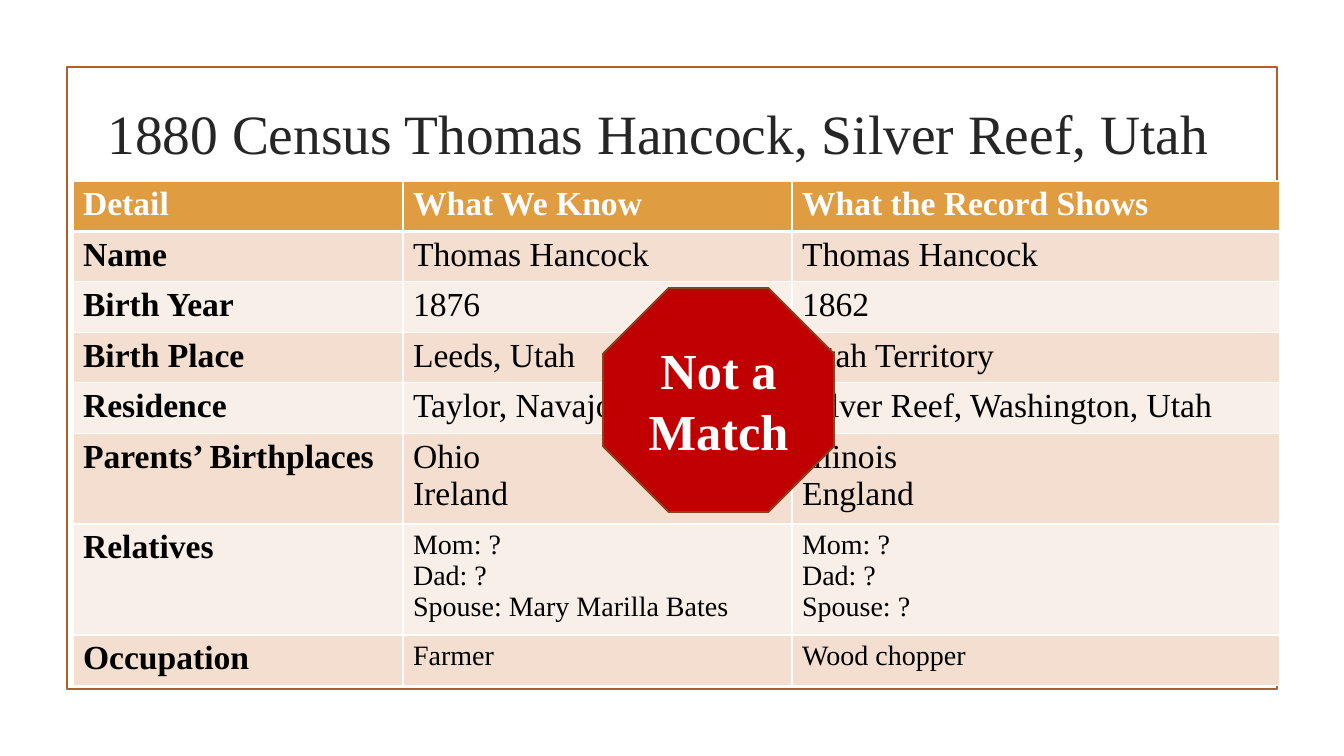
from lxml import etree
from pptx import Presentation
from pptx.dml.color import RGBColor
from pptx.enum.shapes import MSO_SHAPE
from pptx.enum.text import MSO_ANCHOR, PP_ALIGN
from pptx.oxml.ns import qn
from pptx.util import Pt

TITLE = "1880 Census Thomas Hancock, Silver Reef, Utah"
VERDICT = "Not a Match"
ROWS = [
    ("Detail", "What We Know", "What the Record Shows"),
    ("Name", "Thomas Hancock", "Thomas Hancock"),
    ("Birth Year", "1876", "1862"),
    ("Birth Place", "Leeds, Utah", "Utah Territory"),
    ("Residence", "Taylor, Navajo, Arizona", "Silver Reef, Washington, Utah"),
    ("Parents’ Birthplaces", "Ohio\nIreland", "Illinois\nEngland"),
    ("Relatives", "Mom: ?\nDad: ?\nSpouse: Mary Marilla Bates",
     "Mom: ?\nDad: ?\nSpouse: ?"),
    ("Occupation", "Farmer", "Wood chopper"),
]
SMALL_TEXT_ROWS = ("Relatives", "Occupation")
ROW_HEIGHTS = {"Parents’ Birthplaces": 84, "Relatives": 103}
DEFAULT_ROW_HEIGHT = 47
COLUMN_WIDTHS = (330, 389, 488)

SLIDE_SIZE = (1344, 756)
FRAME_AREA = (67, 67, 1210, 622)
TITLE_AREA = (66, 84, 1184, 97)
TABLE_CORNER = (73, 181)
VERDICT_AREA = (603, 288, 231, 224)

FONT = "Times New Roman"
WHITE, BLACK, TITLE_GREY = "FFFFFF", "000000", "262626"
HEADER_FILL, BAND_FILLS = "E09C41", ("F9EFE9", "F3DECF")
FRAME_LINE, VERDICT_FILL, VERDICT_LINE = "B15E28", "C00000", "83461E"

RECTANGLE, OCTAGON = MSO_SHAPE.RECTANGLE, MSO_SHAPE.OCTAGON
MIDDLE, CENTER = MSO_ANCHOR.MIDDLE, PP_ALIGN.CENTER


def px(length):
    return round(length * 914400 / 100.8)


def color(hex_code):
    return RGBColor.from_string(hex_code)


def write(frame, text, size, hex_code, bold=False, align=None):
    frame.text = text
    for para in frame.paragraphs:
        para.alignment = align
        for span in para.runs:
            span.font.name = FONT
            span.font.size = Pt(size)
            span.font.bold = bold
            span.font.color.rgb = color(hex_code)


def add_outlined(slide, kind, area, line, fill=None):
    shape = slide.shapes.add_shape(kind, *map(px, area))
    shape.shadow.inherit = False
    if fill:
        shape.fill.solid()
        shape.fill.fore_color.rgb = color(fill)
    else:
        shape.fill.background()
    shape.line.color.rgb = color(line)
    shape.line.width = Pt(1.25)
    return shape


def set_borders(cell, top, bottom):
    """Draw white borders, 1 pt at the sides and the given widths above and below."""
    properties = cell._tc.get_or_add_tcPr()
    sides = (("a:lnL", 1), ("a:lnR", 1), ("a:lnT", top), ("a:lnB", bottom))
    for position, (tag, width) in enumerate(sides):
        line = etree.Element(qn(tag), w=str(Pt(width)))
        fill = etree.SubElement(line, qn("a:solidFill"))
        etree.SubElement(fill, qn("a:srgbClr"), val=WHITE)
        properties.insert(position, line)


def add_comparison(slide):
    heights = [ROW_HEIGHTS.get(row[0], DEFAULT_ROW_HEIGHT) for row in ROWS]
    area = (*TABLE_CORNER, sum(COLUMN_WIDTHS), sum(heights))
    table = slide.shapes.add_table(
        len(ROWS), len(COLUMN_WIDTHS), *map(px, area)).table
    for column, width in zip(table.columns, COLUMN_WIDTHS):
        column.width = px(width)
    for r, (row, height) in enumerate(zip(ROWS, heights)):
        table.rows[r].height = px(height)
        header = r == 0
        for c, text in enumerate(row):
            cell = table.cell(r, c)
            small = c > 0 and row[0] in SMALL_TEXT_ROWS
            write(cell.text_frame, text, 20 if small else 24,
                  WHITE if header else BLACK, bold=header or c == 0)
            cell.fill.solid()
            cell.fill.fore_color.rgb = color(HEADER_FILL if header else BAND_FILLS[r % 2])
            set_borders(cell, top=3 if r == 1 else 1, bottom=3 if header else 1)


def main():
    deck = Presentation()
    deck.slide_width, deck.slide_height = map(px, SLIDE_SIZE)
    slide = deck.slides.add_slide(deck.slide_layouts[6])

    add_outlined(slide, RECTANGLE, FRAME_AREA, FRAME_LINE)

    title = slide.shapes.add_textbox(*map(px, TITLE_AREA)).text_frame
    title.word_wrap = True
    title.vertical_anchor = MIDDLE
    write(title, TITLE, 39.6, TITLE_GREY, align=CENTER)

    add_comparison(slide)

    verdict = add_outlined(slide, OCTAGON, VERDICT_AREA, VERDICT_LINE, VERDICT_FILL)
    verdict.text_frame.word_wrap = True
    verdict.text_frame.vertical_anchor = MIDDLE
    write(verdict.text_frame, VERDICT, 36, WHITE, bold=True, align=CENTER)

    deck.save("out.pptx")


if __name__ == "__main__":
    main()
